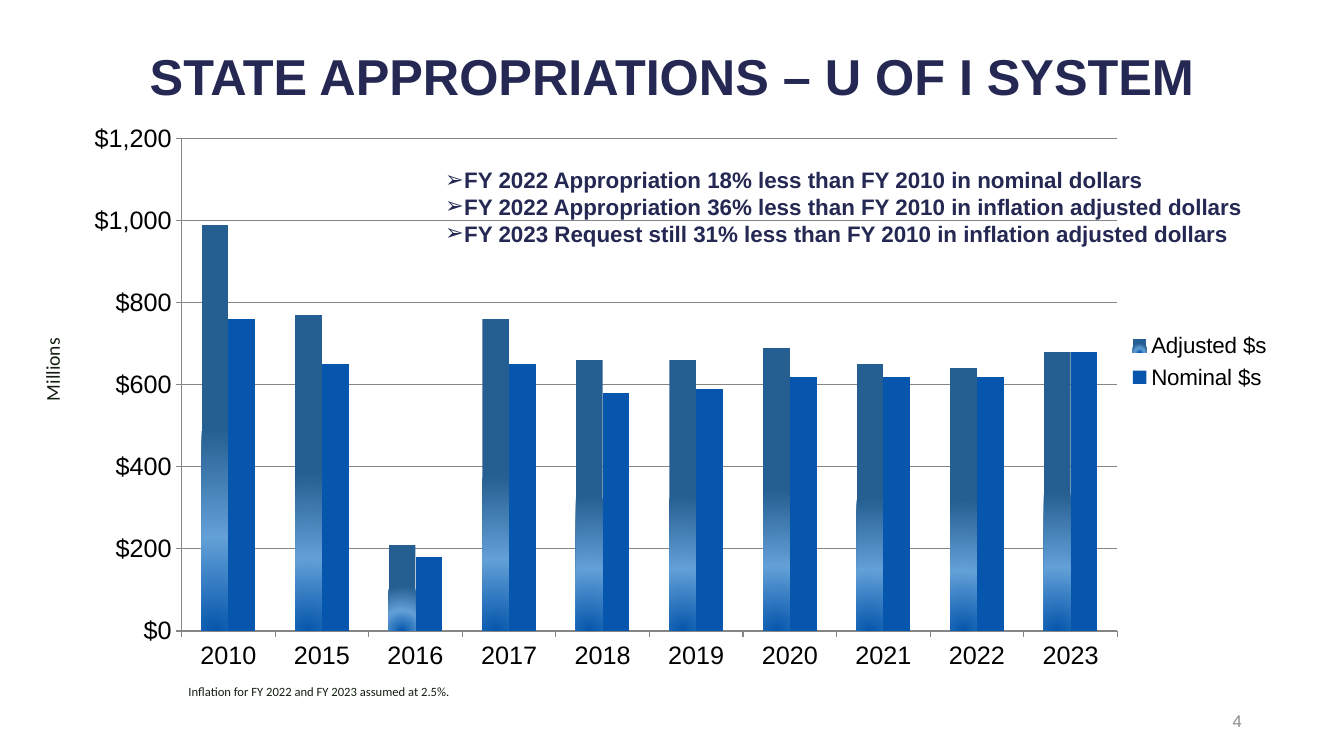
import pptx
import pptx.chart.data
import pptx.dml.color
import pptx.enum.chart
import pptx.enum.text
import pptx.oxml
import pptx.oxml.ns
import pptx.util
from lxml import etree

Cm = pptx.util.Cm
Pt = pptx.util.Pt
ALIGN = pptx.enum.text.PP_ALIGN
ANCHOR = pptx.enum.text.MSO_ANCHOR
NAVY, BLUE, INK, GRAY, BLACK = "242852", "0556AC", "131F11", "8C8C8C", "000000"
GRID = "868686"


def color(value):
    return pptx.dml.color.RGBColor.from_string(value)


def style(font, size, fill, **values):
    """Set size and colour of a font, plus any further font attributes."""
    font.color.rgb = color(fill)
    for name, value in {"size": Pt(size), "name": "Arial", **values}.items():
        setattr(font, name, value)


deck = pptx.Presentation()
deck.slide_width, deck.slide_height = Cm(33.87), Cm(19.05)
page = deck.slides.add_slide(deck.slide_layouts[5])

# Title
title = page.shapes.title
title.left, title.top, title.width, title.height = Cm(2.34), Cm(1.02), Cm(29.21), Cm(1.96)
frame = title.text_frame
frame.text = "STATE APPROPRIATIONS – U OF I SYSTEM"
frame.auto_size = pptx.enum.text.MSO_AUTO_SIZE.NONE
frame.vertical_anchor = ANCHOR.MIDDLE
para = frame.paragraphs[0]
para.alignment = ALIGN.CENTER
para.line_spacing = 0.9
style(para.runs[0].font, 36, NAVY, bold=True)

# Chart
data = pptx.chart.data.CategoryChartData(number_format='"$"#,##0')
data.categories = ["2010"] + [str(year) for year in range(2015, 2024)]
data.add_series("Adjusted $s", [990, 770, 210, 760, 660, 660, 690, 650, 640, 680])
data.add_series("Nominal $s", [760, 650, 180, 650, 580, 590, 620, 620, 620, 680])
chart = page.shapes.add_chart(
    pptx.enum.chart.XL_CHART_TYPE.COLUMN_CLUSTERED,
    Cm(1.88), Cm(2.97), Cm(30.99), Cm(14.63), data).chart
chart.has_title = False
style(chart.font, 18, BLACK)

plot = chart.plots[0]
plot.gap_width, plot.overlap, plot.vary_by_categories = 150, 0, False
adjusted, nominal = plot.series
nominal.format.fill.solid()
nominal.format.fill.fore_color.rgb = color(BLUE)
stops = "".join(
    f'<a:gs pos="{percent * 1000}"><a:srgbClr val="{shade}"/></a:gs>'
    for percent, shade in [(0, BLUE), (46, "63A0D7"), (100, "255E91")])
gradient = pptx.oxml.parse_xml(
    f'<a:gradFill {pptx.oxml.ns.nsdecls("a")} rotWithShape="1"><a:gsLst>{stops}</a:gsLst>'
    '<a:path path="circle"><a:fillToRect l="50000" t="130000" r="50000" b="-30000"/></a:path>'
    '</a:gradFill>')
adjusted._element.get_or_add_spPr().insert(0, gradient)

value_axis, category_axis = chart.value_axis, chart.category_axis
value_axis.minimum_scale, value_axis.maximum_scale, value_axis.major_unit = 0, 1200, 200
value_axis.has_major_gridlines = True
value_axis.tick_labels.number_format = '"$"#,##0'
value_axis.tick_labels.number_format_is_linked = False
for axis in (value_axis, category_axis):
    axis.major_tick_mark = pptx.enum.chart.XL_TICK_MARK.OUTSIDE
    style(axis.tick_labels.font, 18, BLACK)
for part in (value_axis, category_axis, value_axis.major_gridlines):
    part.format.line.color.rgb = color(GRID)
    part.format.line.width = Pt(0.75)

chart.has_legend = True
legend = chart.legend
legend.position = pptx.enum.chart.XL_LEGEND_POSITION.RIGHT
legend.include_in_layout = False
style(legend.font, 16, BLACK)

# Fixed places of plot area and legend, as fractions of the chart
plot_area = chart._chartSpace.chart.plotArea
for parent, index, target, place in [
        (plot_area, 0, '<c:layoutTarget val="inner"/>', (0.087, 0.036, 0.761, 0.848)),
        (legend._element, 1, "", (0.85, 0.36, 0.13, 0.12))]:
    for old in parent.findall(pptx.oxml.ns.qn("c:layout")):
        parent.remove(old)
    modes = '<c:xMode val="edge"/><c:yMode val="edge"/>'
    sizes = "".join(f'<c:{key} val="{value}"/>' for key, value in zip("xywh", place))
    parent.insert(index, pptx.oxml.parse_xml(
        f'<c:layout {pptx.oxml.ns.nsdecls("c")}><c:manualLayout>'
        f'{target}{modes}{sizes}</c:manualLayout></c:layout>'))

# Text boxes: place, lines, alignment, anchor, size, colour, further font values
findings = [
    "FY 2022 Appropriation 18% less than FY 2010 in nominal dollars",
    "FY 2022 Appropriation 36% less than FY 2010 in inflation adjusted dollars",
    "FY 2023 Request still 31% less than FY 2010 in inflation adjusted dollars",
]
calibri = {"name": "Calibri"}
frames = []
for place, lines, align, anchor, size, fill, values in [
        ((0.89, 6.05, 1.12, 6.53), ["Millions"],
         ALIGN.CENTER, ANCHOR.TOP, 14, INK, calibri),
        ((10.97, 4.06, 21.03, 2.31), findings,
         ALIGN.LEFT, ANCHOR.TOP, 16, NAVY, {"bold": True}),
        ((4.5, 17.12, 9.58, 0.64), ["Inflation for FY 2022 and FY 2023 assumed at 2.5%."],
         ALIGN.LEFT, ANCHOR.TOP, 9, INK, calibri),
        ((23.93, 17.65, 7.62, 1.02), ["4"],
         ALIGN.RIGHT, ANCHOR.MIDDLE, 12, GRAY, {})]:
    frame = page.shapes.add_textbox(*map(Cm, place)).text_frame
    frame.word_wrap = True
    frame.vertical_anchor = anchor
    frame.text = "\n".join(lines)
    for para in frame.paragraphs:
        para.alignment = align
        style(para.runs[0].font, size, fill, **values)
    frames.append(frame)

axis_title, findings_list = frames[:2]
axis_title._txBody.bodyPr.set("vert", "vert270")
for para in findings_list.paragraphs:
    properties = para._p.get_or_add_pPr()
    properties.set("marL", str(Cm(0.48)))
    properties.set("indent", str(-Cm(0.48)))
    for tag, key, value in [("a:buFont", "typeface", "Arial"), ("a:buChar", "char", "➢")]:
        etree.SubElement(properties, pptx.oxml.ns.qn(tag)).set(key, value)

deck.save("out.pptx")
